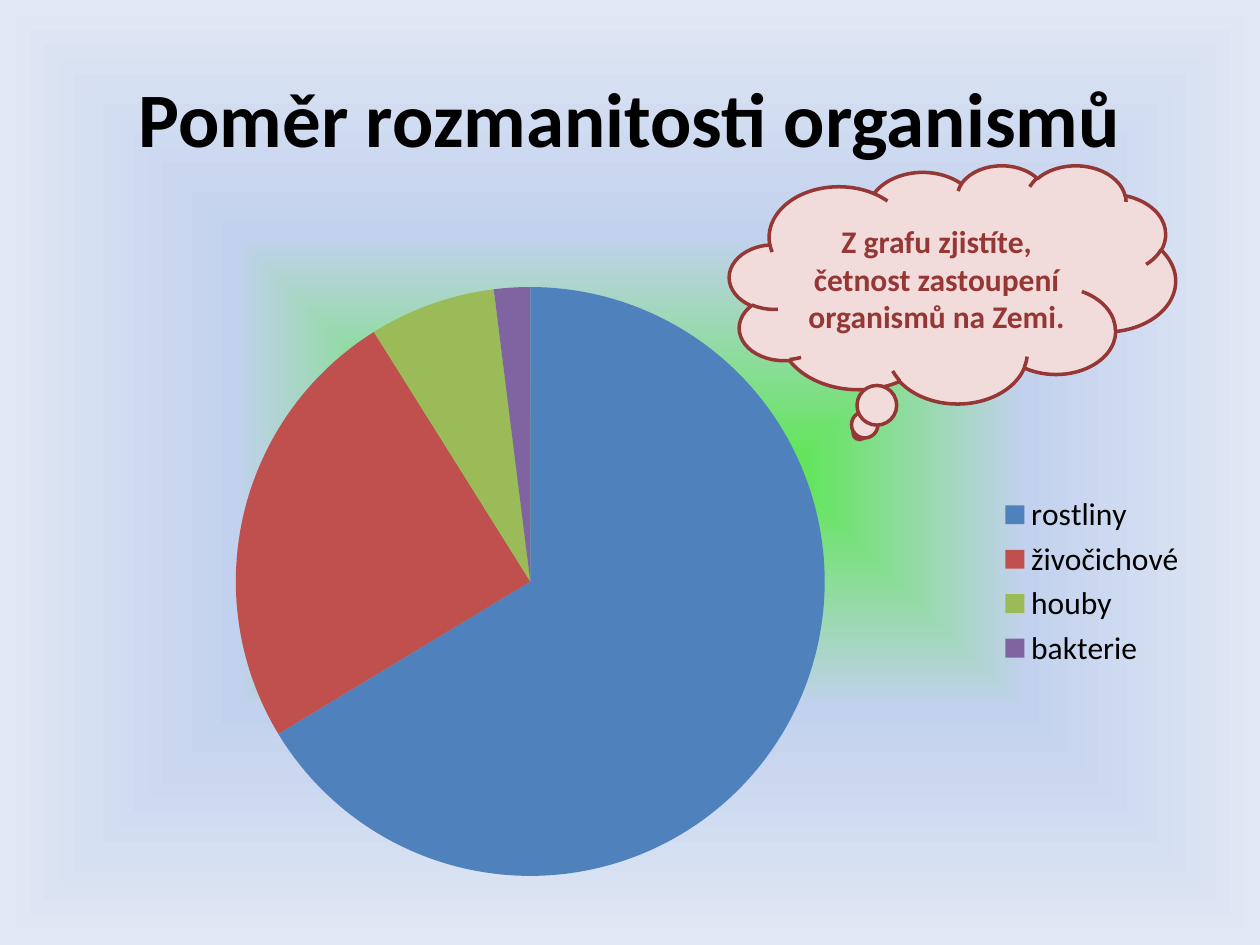
from pptx import Presentation
from pptx.chart.data import CategoryChartData
from pptx.dml.color import RGBColor
from pptx.enum.chart import XL_CHART_TYPE, XL_LEGEND_POSITION
from pptx.enum.shapes import MSO_SHAPE
from pptx.enum.text import MSO_ANCHOR, PP_ALIGN
from pptx.oxml import parse_xml
from pptx.oxml.ns import nsdecls, qn
from pptx.util import Inches, Pt

TITLE = "Poměr rozmanitosti organismů"
NOTE = "Z grafu zjistíte,\včetnost zastoupení\vorganismů na Zemi."
SHARES = [
    ("rostliny", 67, "4F81BD"),
    ("živočichové", 25, "C0504D"),
    ("houby", 7, "9BBB59"),
    ("bakterie", 2, "8064A2"),
]
COLORS = {"text": "000000", "cloud": "F2DCDB", "edge": "953735"}
GLOW = [(0, "5BE650"), (50, "C2D1ED"), (100, "E1E8F5")]
FONT = "Calibri"


def box(*sizes):
    return [Inches(size) for size in sizes]


def style(font, size, color, bold=False):
    font.name, font.size, font.bold = FONT, Pt(size), bold
    font.color.rgb = RGBColor.from_string(color)


def write(shape, text, size, color):
    frame = shape.text_frame
    frame.word_wrap = True
    frame.vertical_anchor = MSO_ANCHOR.MIDDLE
    frame.text = text
    para = frame.paragraphs[0]
    para.alignment = PP_ALIGN.CENTER
    style(para.font, size, color, True)


def glow(slide):
    """Fill the background with a gradient that spreads from the centre."""
    fill = slide.background.fill
    fill.gradient()
    old = next(slide.element.iter(qn("a:gradFill")))
    stops = "".join(
        f'<a:gs pos="{pos * 1000}"><a:srgbClr val="{color}"/></a:gs>'
        for pos, color in GLOW
    )
    new = parse_xml(
        f'<a:gradFill {nsdecls("a")} rotWithShape="1"><a:gsLst>{stops}</a:gsLst>'
        '<a:path path="shape"><a:fillToRect l="50000" t="50000" r="50000" b="50000"/>'
        "</a:path></a:gradFill>"
    )
    old.getparent().replace(old, new)


def add_pie(slide):
    data = CategoryChartData()
    data.categories = [name for name, _, _ in SHARES]
    data.add_series("Series 1", [share for _, share, _ in SHARES])
    chart = slide.shapes.add_chart(
        XL_CHART_TYPE.PIE, *box(0.52, 2.14, 9, 4.95), data
    ).chart
    style(chart.font, 18, COLORS["text"])
    chart.has_title = False
    chart.has_legend = True
    chart.legend.position = XL_LEGEND_POSITION.RIGHT
    chart.legend.include_in_layout = False
    plot = chart.plots[0]
    plot.vary_by_categories = True
    for i, (_, _, color) in enumerate(SHARES):
        fill = plot.series[0].points[i].format.fill
        fill.solid()
        fill.fore_color.rgb = RGBColor.from_string(color)


def add_cloud(slide):
    cloud = slide.shapes.add_shape(
        MSO_SHAPE.CLOUD_CALLOUT, *box(5.79, 1.31, 3.54, 1.89)
    )
    cloud.shadow.inherit = False
    cloud.fill.solid()
    cloud.fill.fore_color.rgb = RGBColor.from_string(COLORS["cloud"])
    cloud.line.color.rgb = RGBColor.from_string(COLORS["edge"])
    cloud.line.width = Pt(2)
    write(cloud, NOTE, 18, COLORS["edge"])


def main():
    deck = Presentation()
    deck.slide_width, deck.slide_height = box(10, 7.5)
    slide = deck.slides.add_slide(deck.slide_layouts[6])
    glow(slide)
    title = slide.shapes.add_textbox(*box(0.5, 0.3, 9, 1.25))
    write(title, TITLE, 44, COLORS["text"])
    add_pie(slide)
    add_cloud(slide)
    deck.save("out.pptx")


if __name__ == "__main__":
    main()
